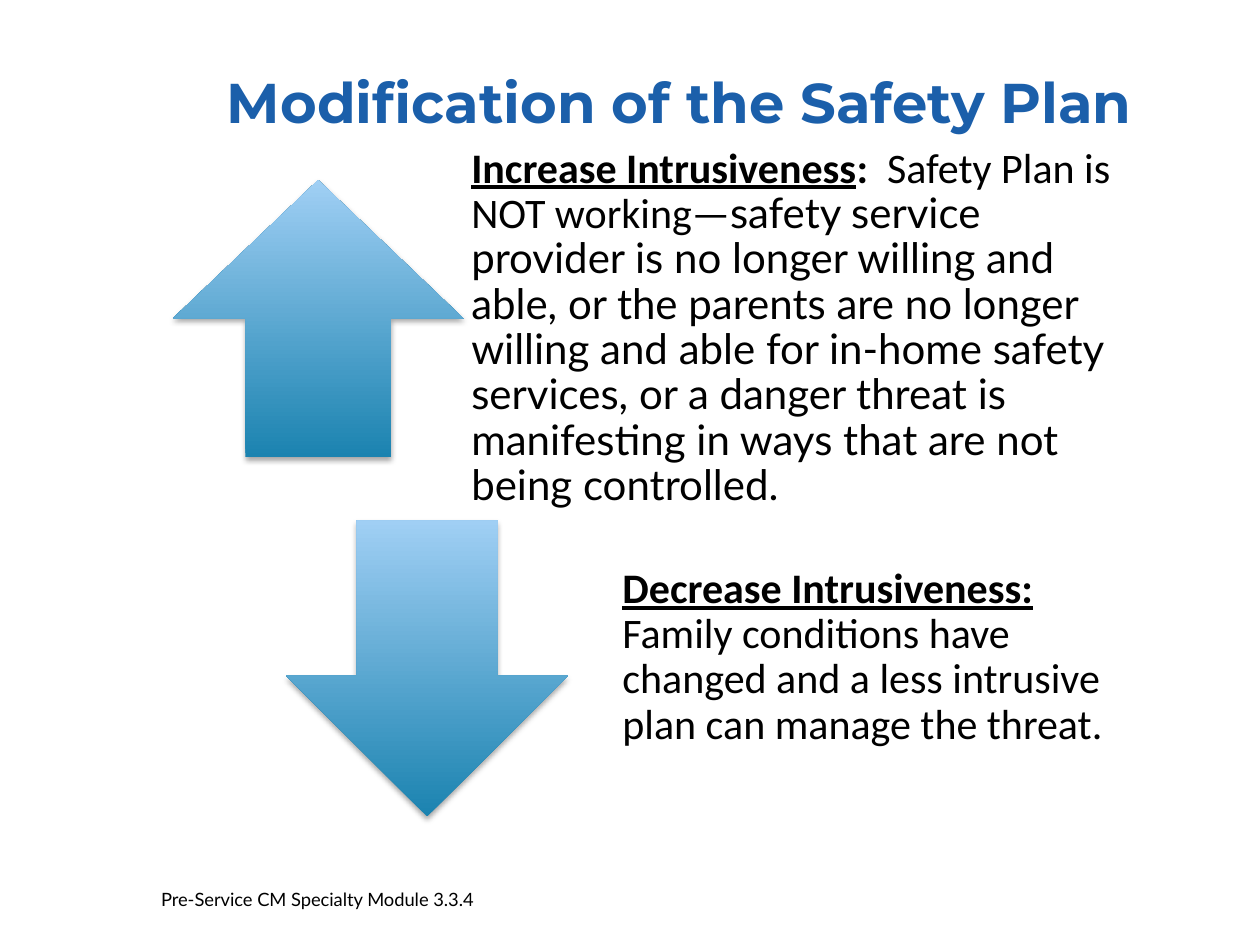
from dataclasses import dataclass

from lxml import etree
from pptx import Presentation
from pptx import util as u
from pptx.dml import color
from pptx.enum import shapes, text
from pptx.oxml import ns


@dataclass(frozen=True)
class Theme:
    blue: str = "1B5FAA"
    ink: str = "000000"
    deep: str = "1B83B0"
    pale: str = "A0CFF4"
    head: float = 32
    body: float = 24
    foot: float = 10.5


THEME = Theme()
INSET = (0.19, 0, 0.19, 0.19)


def put(obj, form):
    """Set each format value on the object."""
    for name, value in form.items():
        setattr(obj, name, value)


def style(size, font="Calibri", **more):
    return {"size": u.Pt(size), "name": font, **more}


def add_text(slide, box, runs, tint=THEME.ink, inset=None, frame=None, para=None):
    """Add a wrapped one-paragraph box from (words, font format) pairs."""
    body = slide.shapes.add_textbox(*map(u.Inches, box)).text_frame
    put(body, {"word_wrap": True, **(frame or {})})
    if inset:
        sides = ("left", "top", "right", "bottom")
        put(body, {f"margin_{s}": u.Inches(v) for s, v in zip(sides, inset)})
    line = body.paragraphs[0]
    put(line, para or {})
    for words, form in runs:
        run = line.add_run()
        run.text = words
        put(run.font, form)
        run.font.color.rgb = color.RGBColor.from_string(tint)


def add_shade(shape):
    """Give the shape a soft shadow straight below it."""
    shape.shadow.inherit = False
    effects = shape._element.spPr.find(ns.qn("a:effectLst"))
    outer = etree.SubElement(effects, ns.qn("a:outerShdw"), {
        "blurRad": str(u.Pt(3.1)), "dist": str(u.Pt(1.8)),
        "dir": "5400000", "rotWithShape": "0"})
    tone = etree.SubElement(outer, ns.qn("a:srgbClr"), val=THEME.ink)
    etree.SubElement(tone, ns.qn("a:alpha"), val="35000")


def add_arrow(slide, kind, box):
    """Add a block arrow that fades from deep at the base to pale on top."""
    arrow = slide.shapes.add_shape(kind, *map(u.Inches, box))
    arrow.line.fill.background()
    arrow.fill.gradient()
    arrow.fill.gradient_angle = 90
    for stop, tint in zip(arrow.fill.gradient_stops, (THEME.deep, THEME.pale)):
        stop.color.rgb = color.RGBColor.from_string(tint)
    add_shade(arrow)


def main():
    deck = Presentation()
    put(deck, {"slide_width": u.Inches(10), "slide_height": u.Inches(7.5)})
    slide = deck.slides.add_slide(deck.slide_layouts[6])
    middle = {"vertical_anchor": text.MSO_ANCHOR.MIDDLE}
    block = {"inset": INSET, "frame": middle, "para": {"line_spacing": 0.9}}
    plain = style(THEME.body)
    bold = {**plain, "bold": True}
    lead = {**bold, "underline": True}

    # Title
    add_text(slide, (1.52, 0.31, 7.75, 0.99),
             [("Modification of the Safety Plan",
               style(THEME.head, "Montserrat", bold=True))],
             tint=THEME.blue, frame=middle,
             para={"alignment": text.PP_ALIGN.CENTER})

    # Increase
    add_arrow(slide, shapes.MSO_SHAPE.UP_ARROW, (1.37, 1.43, 2.31, 2.2))
    add_text(slide, (3.55, 1.41, 5.58, 2.58), [
        ("Increase Intrusiveness", lead),
        (":  ", bold),
        ("Safety Plan is NOT working—", plain),
        ("safety service provider is no longer willing and able, or the "
         "parents are no longer willing and able for in-home safety services, "
         "or a danger threat is manifesting in ways that are not being "
         "controlled.", style(THEME.body, "Lato")),
    ], **block)

    # Decrease
    add_arrow(slide, shapes.MSO_SHAPE.DOWN_ARROW, (2.27, 4.13, 2.24, 2.35))
    add_text(slide, (4.75, 3.36, 4.38, 3.91), [
        ("Decrease Intrusiveness: ", lead),
        ("Family conditions have changed and a less intrusive plan can "
         "manage the threat.", plain),
    ], **block)

    # Footer
    add_text(slide, (1.18, 7, 2.99, 0.33),
             [("Pre-Service CM Specialty Module 3.3.4",
               style(THEME.foot, "Lato"))])

    deck.save("out.pptx")


if __name__ == "__main__":
    main()
